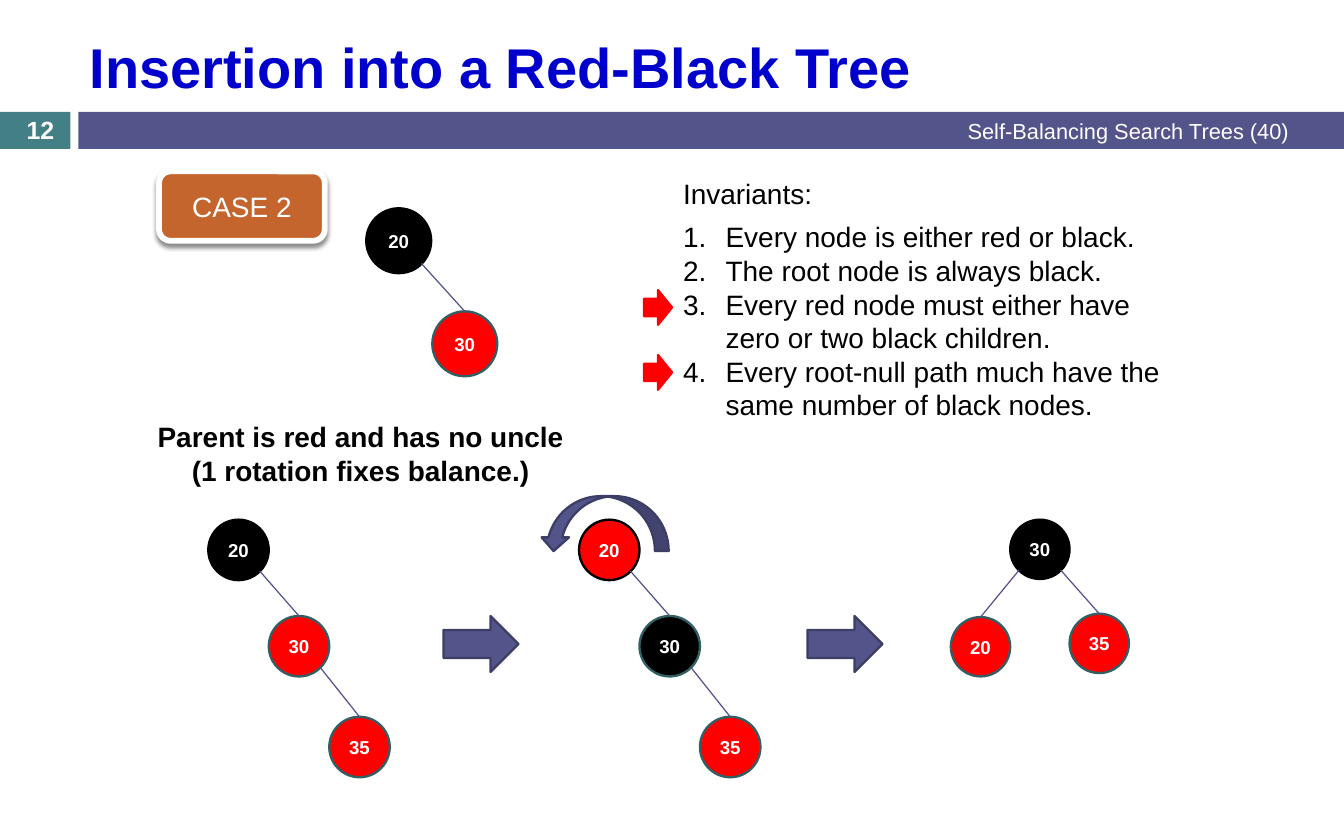
from lxml import etree
from pptx import Presentation
from pptx.dml.color import RGBColor
from pptx.enum import shapes, text
from pptx.oxml import ns
from pptx.util import Inches, Pt

BLACK = RGBColor(0x00, 0x00, 0x00)
WHITE = RGBColor(0xFF, 0xFF, 0xFF)
RED = RGBColor(0xFF, 0x00, 0x00)
BLUE = RGBColor(0x00, 0x00, 0xCC)
INDIGO = RGBColor(0x53, 0x54, 0x8A)
DARK_INDIGO = RGBColor(0x3D, 0x3E, 0x66)
TEAL = RGBColor(0x43, 0x80, 0x86)
DARK_TEAL = RGBColor(0x32, 0x5F, 0x63)
ORANGE = RGBColor(0xC4, 0x65, 0x2D)

KIND = shapes.MSO_SHAPE
LEFT, CENTER, RIGHT = text.PP_ALIGN.LEFT, text.PP_ALIGN.CENTER, text.PP_ALIGN.RIGHT
TOP, MIDDLE = text.MSO_ANCHOR.TOP, text.MSO_ANCHOR.MIDDLE

INVARIANTS = [
    "Every node is either red or black.",
    "The root node is always black.",
    "Every red node must either have zero or two black children.",
    "Every root-null path much have the same number of black nodes.",
]


def add_xml(parent, tag, **attributes):
    return etree.SubElement(parent, ns.qn(tag), attributes)


class TreeSlide:
    font = "Arial"

    def __init__(self, deck):
        self.slide = deck.slides.add_slide(deck.slide_layouts[5])

    def add_span(self, para, words, size, color, bold=False, align=LEFT):
        para.alignment = align
        span = para.add_run()
        span.text = words
        span.font.name = self.font
        span.font.size = Pt(size)
        span.font.bold = bold
        span.font.color.rgb = color

    def title(self, words, left, top, width, height):
        box = self.slide.shapes.title
        box.left, box.top = Inches(left), Inches(top)
        box.width, box.height = Inches(width), Inches(height)
        frame = box.text_frame
        frame.auto_size = text.MSO_AUTO_SIZE.NONE
        frame.vertical_anchor = MIDDLE
        self.add_span(frame.paragraphs[0], words, 36, BLUE, bold=True)

    def text_box(self, left, top, width, height, anchor=MIDDLE):
        box = self.slide.shapes.add_textbox(
            Inches(left), Inches(top), Inches(width), Inches(height))
        frame = box.text_frame
        frame.word_wrap = True
        frame.vertical_anchor = anchor
        return frame

    def label(self, words, left, top, width, height, size, color, bold=False,
              align=CENTER, anchor=MIDDLE):
        frame = self.text_box(left, top, width, height, anchor)
        self.add_span(frame.paragraphs[0], words, size, color, bold, align)

    def numbered_list(self, heading, items, left, top, width, height):
        frame = self.text_box(left, top, width, height, TOP)
        self.add_span(frame.paragraphs[0], heading, 18, BLACK)
        for index, item in enumerate(items):
            para = frame.add_paragraph()
            self.add_span(para, item, 18, BLACK)
            para.space_before = Pt(0 if index else 6)
            props = para._p.get_or_add_pPr()
            props.set("marL", str(Inches(0.38)))
            props.set("indent", str(-Inches(0.38)))
            add_xml(props, "a:buFont", typeface="+mj-lt")
            add_xml(props, "a:buAutoNum", type="arabicPeriod")

    def shape(self, kind, left, top, width, height, fill, line=None, weight=1.5):
        shape = self.slide.shapes.add_shape(
            kind, Inches(left), Inches(top), Inches(width), Inches(height))
        shape.shadow.inherit = False
        shape.fill.solid()
        shape.fill.fore_color.rgb = fill
        if line is None:
            shape.line.fill.background()
        else:
            shape.line.color.rgb = line
            shape.line.width = Pt(weight)
        return shape

    def badge(self, words, left, top, width, height):
        badge = self.shape(KIND.ROUNDED_RECTANGLE, left, top, width, height,
                           ORANGE, WHITE, 3.75)
        effects = badge._element.spPr.find(ns.qn("a:effectLst"))
        shadow = add_xml(effects, "a:outerShdw", blurRad=str(Pt(3)),
                         dist=str(Pt(2.4)), dir="5400000", rotWithShape="0")
        color = add_xml(shadow, "a:srgbClr", val=str(BLACK))
        add_xml(color, "a:alpha", val="45000")
        badge.text_frame.vertical_anchor = MIDDLE
        self.add_span(badge.text_frame.paragraphs[0], words, 18, WHITE, align=CENTER)

    def node(self, value, left, top, size, fill, line=DARK_TEAL, parent=None):
        """Draw a tree node, joined to its parent; return its left, top and size."""
        circle = self.shape(KIND.OVAL, left, top, size, size, fill, line)
        frame = circle.text_frame
        frame.margin_left = frame.margin_right = 0
        frame.vertical_anchor = MIDDLE
        self.add_span(frame.paragraphs[0], str(value), 12, WHITE, True, CENTER)
        if parent:
            self.edge(parent, (left, top, size))
        return left, top, size

    def edge(self, parent, child):
        """Join the parent's lower left or right rim to the top of the child."""
        left, top, size = parent
        near, far = 0.15 * size, 0.85 * size
        start = left + (far if child[0] > left else near)
        line = self.slide.shapes.add_connector(
            shapes.MSO_CONNECTOR.STRAIGHT, Inches(start), Inches(top + far),
            Inches(child[0] + child[2] / 2), Inches(child[1]))
        line.line.color.rgb = INDIGO
        line.line.width = Pt(0.79)
        add_xml(line._element.spPr, "a:effectLst")

    def chain(self, left, root_fill, middle_fill):
        """Draw the right-leaning tree 20, 30, 35."""
        root = self.node(20, left, 4.64, 0.54, root_fill, BLACK)
        middle = self.node(30, left + 0.54, 5.5, 0.54, middle_fill, parent=root)
        self.node(35, left + 1.08, 6.4, 0.54, RED, parent=middle)


def main():
    deck = Presentation()
    deck.slide_width, deck.slide_height = Inches(12), Inches(7.5)
    page = TreeSlide(deck)

    # Header
    page.shape(KIND.RECTANGLE, 0, 1, 0.63, 0.33, TEAL)
    page.shape(KIND.RECTANGLE, 0.7, 1, 11.3, 0.33, INDIGO)
    page.title("Insertion into a Red-Black Tree", 0.7, 0.19, 10.91, 0.8)
    page.label("Self-Balancing Search Trees (40)", 4.5, 0.99, 7.11, 0.35,
               14, WHITE, align=RIGHT)
    page.label("12", 0, 1.01, 0.72, 0.3, 16, WHITE, bold=True)

    # Starting tree and the invariants at stake
    page.badge("CASE 2", 1.42, 1.53, 1.48, 0.62)
    root = page.node(20, 3.27, 1.86, 0.58, BLACK, BLACK)
    page.node(30, 3.86, 2.78, 0.58, RED, parent=root)
    page.numbered_list("Invariants:", INVARIANTS, 6, 1.53, 4.58, 2.31)
    for top in (2.59, 3.17):
        page.shape(KIND.RIGHT_ARROW, 5.75, top, 0.25, 0.31, RED, RED)

    # Insert, rotate, result
    page.label("Parent is red and has no uncle (1 rotation fixes balance.)",
               1.24, 3.7, 3.96, 0.71, 18, BLACK, bold=True, anchor=TOP)
    page.chain(1.86, BLACK, RED)
    page.chain(5.17, RED, BLACK)
    rotation = page.shape(KIND.CURVED_UP_ARROW, 4.82, 4.43, 1.15, 0.49,
                          INDIGO, DARK_INDIGO)
    rotation.rotation = 180
    root = page.node(30, 9.02, 4.64, 0.53, BLACK, BLACK)
    page.node(20, 8.49, 5.51, 0.53, RED, parent=root)
    page.node(35, 9.55, 5.48, 0.53, RED, parent=root)
    for left in (3.96, 7.21):
        page.shape(KIND.RIGHT_ARROW, left, 5.5, 0.67, 0.5, INDIGO, DARK_INDIGO)

    deck.save("out.pptx")


if __name__ == "__main__":
    main()
